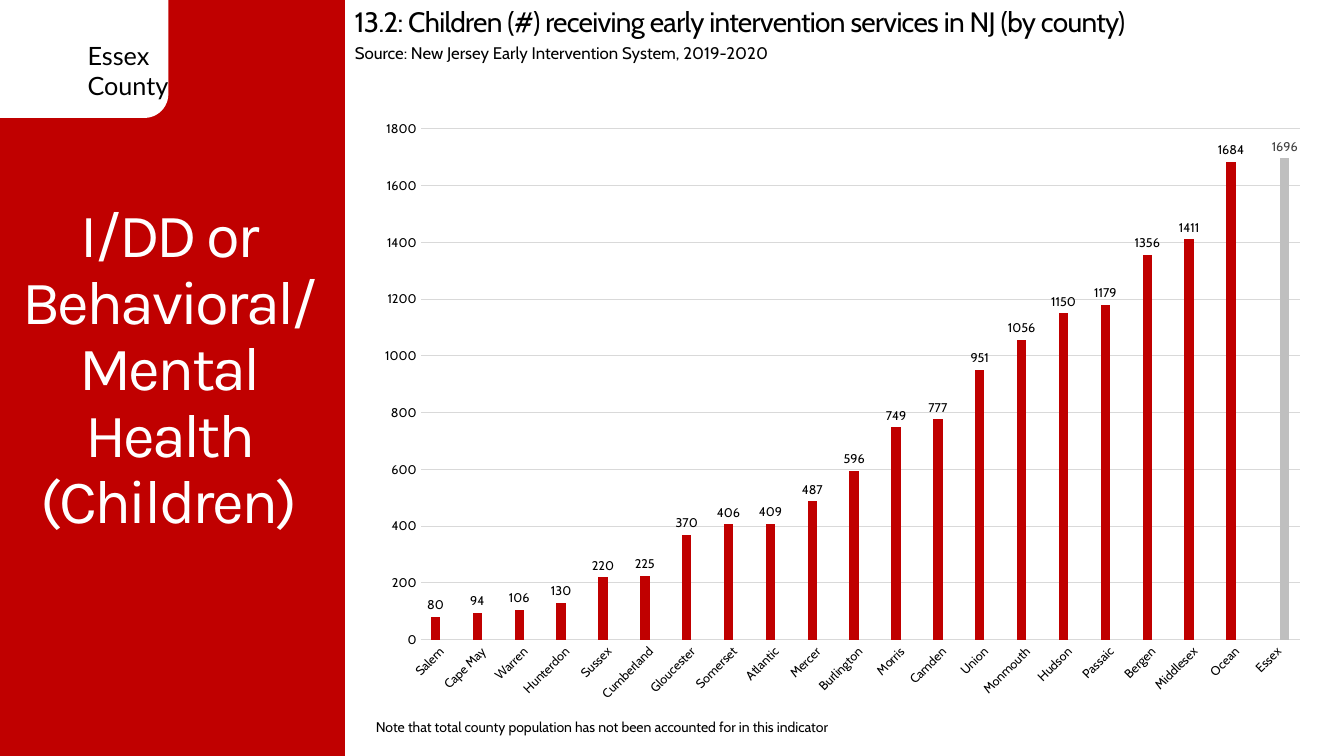
import pptx
import pptx.chart.data
import pptx.dml.color
import pptx.enum.chart
import pptx.enum.shapes
import pptx.enum.text
import pptx.util

Inches = pptx.util.Inches
Pt = pptx.util.Pt

COLORS = {
    "red": "C00000",
    "gray": "BFBFBF",
    "grid": "D9D9D9",
    "dark": "404040",
    "black": "000000",
    "white": "FFFFFF",
}
CHILDREN_BY_COUNTY = {
    "Salem": 80, "Cape May": 94, "Warren": 106, "Hunterdon": 130,
    "Sussex": 220, "Cumberland": 225, "Gloucester": 370, "Somerset": 406,
    "Atlantic": 409, "Mercer": 487, "Burlington": 596, "Morris": 749,
    "Camden": 777, "Union": 951, "Monmouth": 1056, "Hudson": 1150,
    "Passaic": 1179, "Bergen": 1356, "Middlesex": 1411, "Ocean": 1684,
    "Essex": 1696,
}
HIGHLIGHT = "Essex"


def rgb(name):
    return pptx.dml.color.RGBColor.from_string(COLORS[name])


def style_font(font, size, color="black", name="Cabin"):
    font.size = Pt(size)
    font.name = name
    font.bold = False
    font.color.rgb = rgb(color)


def add_block(slide, kind, box, color):
    shape = slide.shapes.add_shape(kind, *map(Inches, box))
    shape.shadow.inherit = False
    shape.fill.solid()
    shape.fill.fore_color.rgb = rgb(color)
    shape.line.fill.background()


def add_text(slide, box, text, size, color="black", font="Cabin", spacing=0):
    """Add a wrapped text box; spacing is letter spacing in points."""
    text_frame = slide.shapes.add_textbox(*map(Inches, box)).text_frame
    text_frame.word_wrap = True
    text_frame.text = text
    for paragraph in text_frame.paragraphs:
        for run in paragraph.runs:
            style_font(run.font, size, color, font)
            if spacing:
                run.font._element.set("spc", str(round(spacing * 100)))
    return text_frame


def style_axis(axis):
    axis.major_tick_mark = pptx.enum.chart.XL_TICK_MARK.NONE
    axis.minor_tick_mark = pptx.enum.chart.XL_TICK_MARK.NONE
    style_font(axis.tick_labels.font, 9)


def style_series(series, color, label_color):
    series.format.fill.solid()
    series.format.fill.fore_color.rgb = rgb(color)
    series.invert_if_negative = False
    labels = series.data_labels
    labels.show_value = True
    labels.position = pptx.enum.chart.XL_LABEL_POSITION.OUTSIDE_END
    style_font(labels.font, 9, label_color)


def add_county_chart(slide, box):
    data = pptx.chart.data.CategoryChartData()
    data.categories = list(CHILDREN_BY_COUNTY)
    for name, highlighted in (("Series 1", False), ("Series 2", True)):
        data.add_series(name, [
            value if (county == HIGHLIGHT) == highlighted else None
            for county, value in CHILDREN_BY_COUNTY.items()
        ])
    chart = slide.shapes.add_chart(
        pptx.enum.chart.XL_CHART_TYPE.COLUMN_CLUSTERED, *map(Inches, box), data
    ).chart
    chart.has_legend = False
    chart.has_title = False
    style_font(chart.font, 10, name="Calibri")

    # Bars
    plot = chart.plots[0]
    plot.vary_by_categories = False
    plot.gap_width = 219
    plot.overlap = -27
    style_series(plot.series[0], "red", "black")
    style_series(plot.series[1], "gray", "dark")

    # Axes
    counties, count = chart.category_axis, chart.value_axis
    style_axis(counties)
    style_axis(count)
    label_body = counties._element.find(pptx.oxml.ns.qn("c:txPr")).bodyPr
    label_body.set("rot", "-2700000")
    label_body.set("vert", "horz")
    count.minimum_scale, count.maximum_scale, count.major_unit = 0, 1800, 200
    count.has_major_gridlines = True
    count.format.line.fill.background()
    for line in (counties.format.line, count.major_gridlines.format.line):
        line.color.rgb = rgb("grid")
        line.width = Pt(0.75)


def main():
    presentation = pptx.Presentation()
    presentation.slide_width = Inches(13.33)
    presentation.slide_height = Inches(7.5)
    slide = presentation.slides.add_slide(presentation.slide_layouts[6])
    kinds = pptx.enum.shapes.MSO_SHAPE

    # Side panel with county tab
    add_block(slide, kinds.RECTANGLE, (0, 0, 3.42, 7.5), "red")
    add_block(slide, kinds.ROUNDED_RECTANGLE, (-0.33, -0.25, 2, 1.42), "white")
    add_text(slide, (0.77, 0.35, 1.1, 0.71), "Essex\nCounty", 18, font="Lato")

    # Heading and source
    add_text(slide, (3.42, 0, 9.9, 0.44),
             "13.2: Children (#) receiving early intervention services in NJ (by county)",
             20, spacing=-0.5)
    add_text(slide, (3.42, 0.37, 9.19, 0.3),
             "Source: New Jersey Early Intervention System, 2019-2020", 12)

    # Chart and note
    add_county_chart(slide, (3.63, 1.08, 9.45, 6))
    add_text(slide, (3.63, 7.08, 9.33, 0.27),
             "Note that total county population has not been accounted for in this indicator", 10)

    # Topic title
    title = add_text(slide, (-0.1, 0.68, 3.55, 6),
                     "I/DD or Behavioral/Mental Health (Children)",
                     44, "white", "Karla", -2)
    title.vertical_anchor = pptx.enum.text.MSO_ANCHOR.MIDDLE
    title.paragraphs[0].alignment = pptx.enum.text.PP_ALIGN.CENTER
    title.paragraphs[0].line_spacing = 0.9

    presentation.save("out.pptx")


if __name__ == "__main__":
    main()
